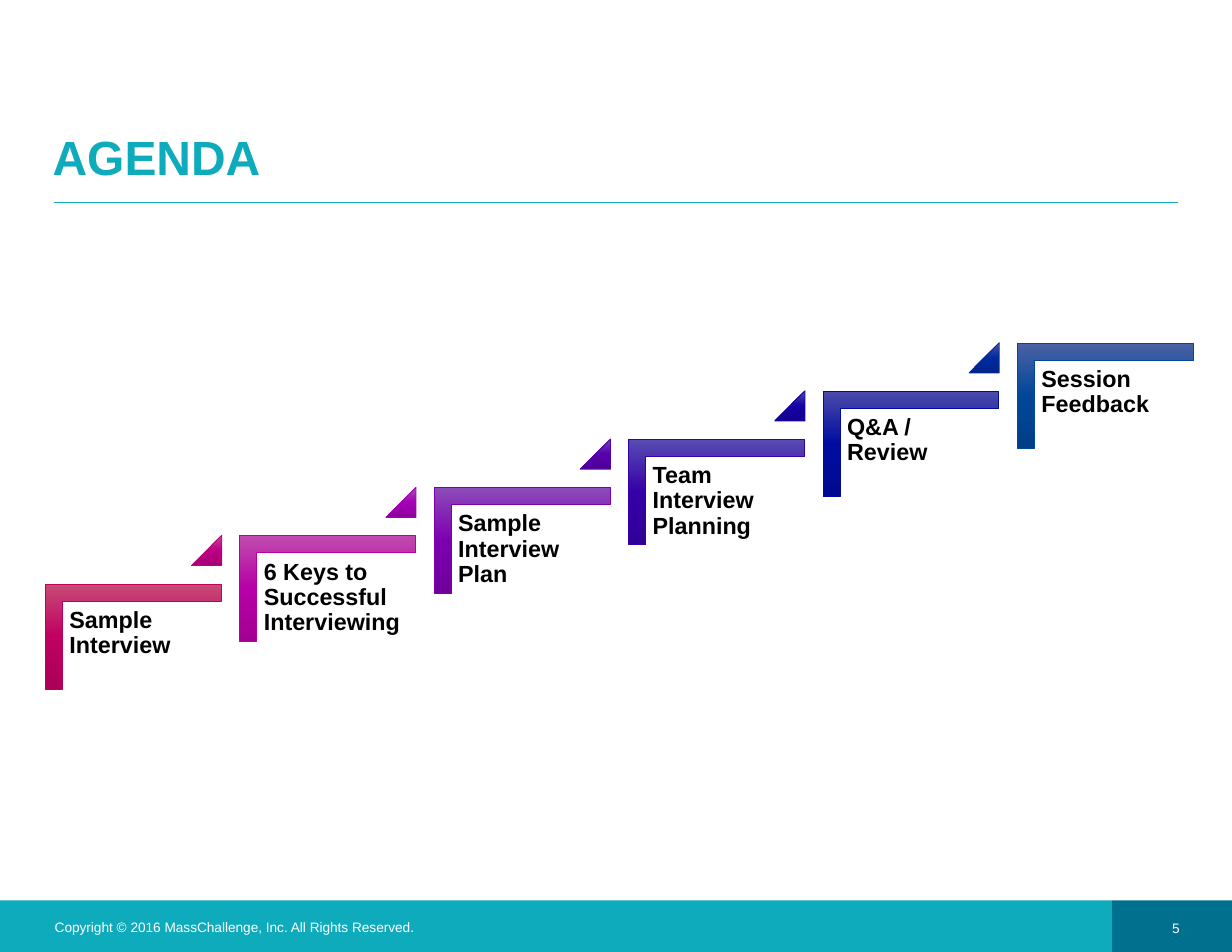
from copy import deepcopy

from lxml.etree import SubElement
from pptx import Presentation
from pptx.dml.color import RGBColor
from pptx.enum.shapes import MSO_CONNECTOR, MSO_SHAPE
from pptx.enum.text import MSO_ANCHOR, PP_ALIGN
from pptx.oxml.ns import qn
from pptx.util import Inches, Pt

COLORS = {"teal": "0EABBC", "deep_teal": "00708F", "white": "FFFFFF", "black": "000000"}

# Agenda steps: label and gradient from top to bottom
STEPS = [
    ("Sample Interview", ("C74B75", "BF0061", "AA0056")),
    ("6 Keys to Successful Interviewing", ("C04BAF", "B700A5", "A30093")),
    ("Sample Interview Plan", ("8C4BB9", "7D00B0", "6F009C")),
    ("Team Interview Planning", ("584BB2", "3600A8", "300095")),
    ("Q&A / Review", ("4B4BAB", "000CA1", "000A8F")),
    ("Session Feedback", ("4B62A4", "004799", "003F88")),
]
# Triangles between neighbouring steps
RISES = [
    ("C44B92", "BB0084", "A60075"),
    ("AD4BBD", "A300B4", "9000A0"),
    ("6E4BB6", "5800AC", "4F0099"),
    ("4D4BAF", "1400A4", "120092"),
    ("4B53A8", "002A9D", "00258B"),
]

# Staircase rule, in percent of the slide's width and height
FIRST_LEFT, FIRST_TOP = 3.68, 61.35
STEP_RIGHT, STEP_UP = 15.78, 5.06


def write_text(shape, text, size, color, bold=False, align=PP_ALIGN.LEFT,
               anchor=MSO_ANCHOR.TOP, inset=None, line_spacing=None, space_after=None):
    frame = shape.text_frame
    frame.word_wrap = True
    frame.vertical_anchor = anchor
    if inset is not None:
        frame.margin_left = frame.margin_right = Inches(inset)
        frame.margin_top = frame.margin_bottom = Inches(inset)
    frame.text = text
    paragraph = frame.paragraphs[0]
    paragraph.alignment = align
    paragraph.line_spacing = line_spacing
    paragraph.space_before = Pt(0)
    if space_after is not None:
        paragraph.space_after = Pt(space_after)
    font = paragraph.runs[0].font
    font.name, font.size, font.bold = "Arial", Pt(size), bold
    font.color.rgb = RGBColor.from_string(COLORS[color])


class SlideBuilder:
    """Places elements on one slide; lengths are percent of its size."""

    def __init__(self, presentation):
        self.width = presentation.slide_width
        self.height = presentation.slide_height
        self.slide = presentation.slides.add_slide(presentation.slide_layouts[5])

    def box(self, left, top, width, height):
        return (round(self.width * left / 100), round(self.height * top / 100),
                round(self.width * width / 100), round(self.height * height / 100))

    def title(self, text, *area, **style):
        shape = self.slide.shapes.title
        shape.left, shape.top, shape.width, shape.height = self.box(*area)
        write_text(shape, text, **style)

    def text(self, text, *area, **style):
        write_text(self.slide.shapes.add_textbox(*self.box(*area)), text, **style)

    def band(self, color, *area):
        shape = self.slide.shapes.add_shape(MSO_SHAPE.RECTANGLE, *self.box(*area))
        shape.shadow.inherit = False
        shape.fill.solid()
        shape.fill.fore_color.rgb = RGBColor.from_string(COLORS[color])
        shape.line.fill.background()

    def rule(self, color, left, right, top):
        start, level, length, _ = self.box(left, top, right - left, 0)
        line = self.slide.shapes.add_connector(
            MSO_CONNECTOR.STRAIGHT, start, level, start + length, level)
        line.line.color.rgb = RGBColor.from_string(COLORS[color])
        line.line.width = Pt(0.5)
        SubElement(line._element.spPr, qn("a:effectLst"))

    def gradient_shape(self, kind, adjustments, colors, *area, quarter_turn=False):
        left, top, width, height = self.box(*area)
        if quarter_turn:
            # The unturned frame shares its centre with the visible one
            left, top = left + (width - height) // 2, top + (height - width) // 2
            width, height = height, width
        shape = self.slide.shapes.add_shape(kind, left, top, width, height)
        shape.rotation = 90 if quarter_turn else 0
        shape.shadow.inherit = False
        for index, value in enumerate(adjustments):
            shape.adjustments[index] = value
        shape.line.color.rgb = RGBColor.from_string(colors[1])
        shape.line.width = Pt(0.5)
        fill = shape.fill
        fill.gradient()
        fill.gradient_angle = 270
        gradient = shape._element.spPr.find(qn("a:gradFill"))
        gradient.set("rotWithShape", "0")
        stop_list = gradient.find(qn("a:gsLst"))
        stop_list.append(deepcopy(stop_list[0]))
        for stop, position, color in zip(fill.gradient_stops, (0, 0.5, 1), colors):
            stop.position = position
            stop.color.rgb = RGBColor.from_string(color)


def main():
    presentation = Presentation()
    presentation.slide_width, presentation.slide_height = Inches(11), Inches(8.5)
    builder = SlideBuilder(presentation)

    # Footer bands, title and rule
    builder.band("teal", 0, 94.59, 90.27, 5.41)
    builder.band("deep_teal", 90.27, 94.59, 9.73, 5.41)
    builder.rule("teal", 4.36, 95.64, 21.29)
    builder.title("AGENDA", 3.36, 5.29, 93.18, 14.82, size=30.8, color="teal",
                  bold=True, anchor=MSO_ANCHOR.BOTTOM, line_spacing=0.9)

    # Footer text
    footer = {"size": 8.8, "color": "white", "anchor": MSO_ANCHOR.MIDDLE}
    builder.text("Copyright © 2016 MassChallenge, Inc. All Rights Reserved.",
                 3.55, 94.71, 33.73, 5.29, **footer)
    builder.text("5", 92.55, 94.82, 4.09, 5.29, align=PP_ALIGN.RIGHT, **footer)

    # Rising staircase
    for index, (label, colors) in enumerate(STEPS):
        left = FIRST_LEFT + STEP_RIGHT * index
        top = FIRST_TOP - STEP_UP * index
        builder.gradient_shape(MSO_SHAPE.CORNER, (0.161, 0.161), colors,
                               left, top, 14.27, 11.06, quarter_turn=True)
        builder.text(label, left + 1.41, top + 1.82, 12.91, 14.59, size=15, color="black",
                     bold=True, inset=0.06, line_spacing=0.9, space_after=5)
        if index < len(RISES):
            builder.gradient_shape(MSO_SHAPE.ISOSCELES_TRIANGLE, (1,), RISES[index],
                                   left + 11.86, top - 5.12, 2.45, 3.18)

    presentation.save("out.pptx")


if __name__ == "__main__":
    main()
